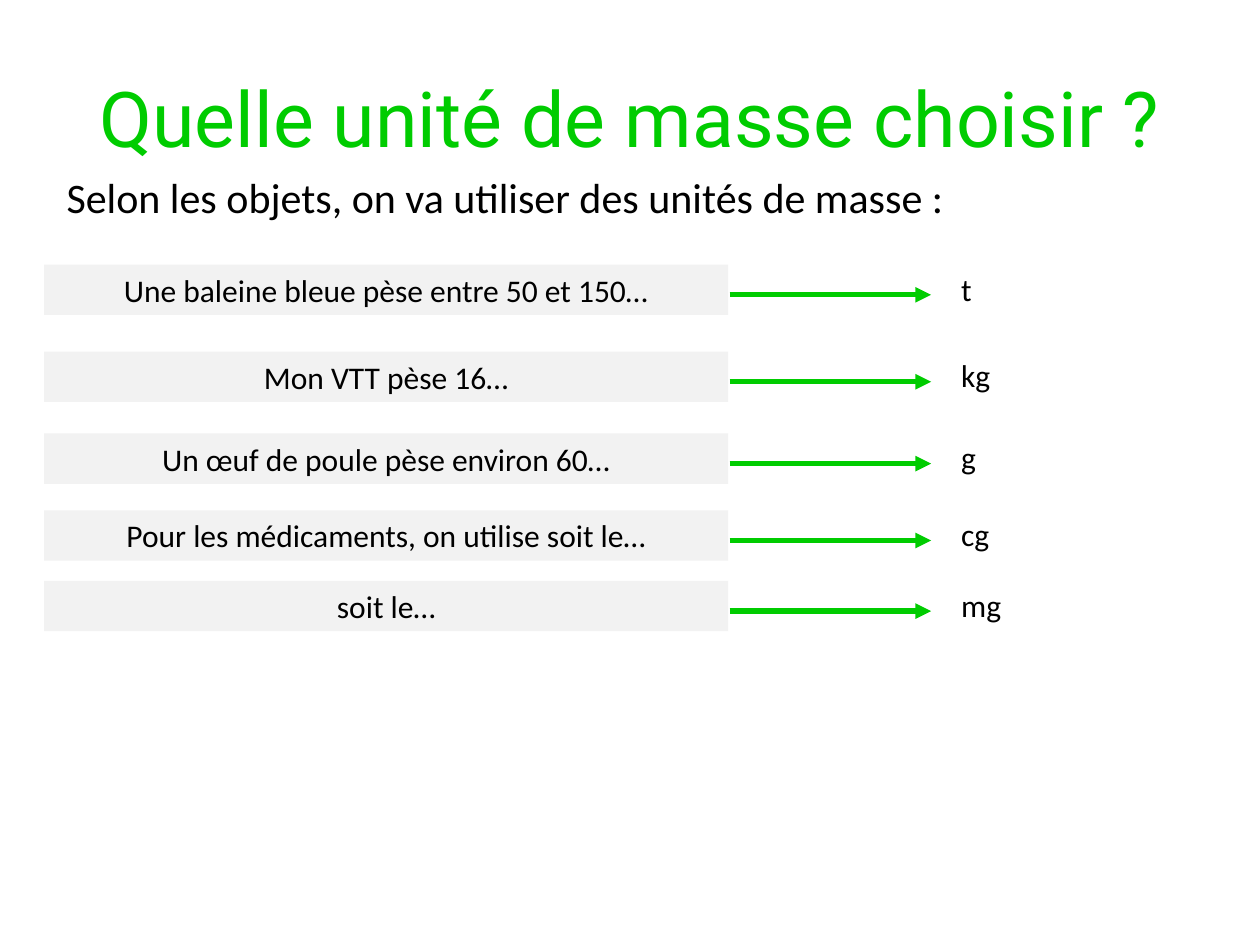
from dataclasses import dataclass

from lxml import etree
from pptx import Presentation
from pptx import util as u
from pptx.dml.color import RGBColor
from pptx.enum import shapes, text
from pptx.oxml.ns import qn
from pptx.slide import Slide
from pptx.text.text import TextFrame

WIDTH, HEIGHT = 10, 7.5


@dataclass(frozen=True)
class Theme:
    green: str = "00CC00"
    grey: str = "F2F2F2"
    black: str = "000000"
    title_font: str = "Roboto"
    body_font: str = "Calibri"
    title_size: int = 44
    intro_size: int = 24
    row_size: int = 18
    arrow_width: int = 3


@dataclass(frozen=True)
class Columns:
    """Horizontal grid of the rows, in inches."""
    label: float = 0.35
    label_width: float = 5.43
    arrow_start: float = 5.79
    arrow_end: float = 7.39
    unit: float = 7.53
    unit_width: float = 0.63


@dataclass(frozen=True)
class Row:
    label: str
    unit: str
    top: float


THEME = Theme()
COLUMNS = Columns()
ROW_HEIGHT = 0.4
ROWS = [
    Row("Une baleine bleue pèse entre 50 et 150…", "t", 2.1),
    Row("Mon VTT pèse 16…", "kg", 2.79),
    Row("Un œuf de poule pèse environ 60…", "g", 3.44),
    Row("Pour les médicaments, on utilise soit le…", "cg", 4.05),
    Row("soit le…", "mg", 4.61),
]


def inches(*lengths: float) -> list[int]:
    return [u.Inches(length) for length in lengths]


def write(frame: TextFrame, words: str, size: int, align: text.PP_ALIGN,
          font: str = THEME.body_font, color: str = THEME.black) -> None:
    frame.text = words
    frame.word_wrap = True
    para = frame.paragraphs[0]
    para.alignment = align
    span = para.runs[0]
    span.font.name = font
    span.font.size = u.Pt(size)
    span.font.color.rgb = RGBColor.from_string(color)


def add_title(slide: Slide, words: str) -> None:
    title = slide.shapes.title
    title.left, title.top, title.width, title.height = inches(
        0.05 * WIDTH, 0.04 * HEIGHT, 0.9 * WIDTH, 1.25)
    frame = title.text_frame
    write(frame, words, THEME.title_size, text.PP_ALIGN.CENTER,
          THEME.title_font, THEME.green)
    frame.vertical_anchor = text.MSO_ANCHOR.MIDDLE
    frame.auto_size = text.MSO_AUTO_SIZE.NONE


def add_text(slide: Slide, words: str, left: float, top: float, width: float,
             height: float, size: int, align: text.PP_ALIGN) -> None:
    box = slide.shapes.add_textbox(*inches(left, top, width, height))
    write(box.text_frame, words, size, align)


def add_label(slide: Slide, words: str, top: float) -> None:
    box = slide.shapes.add_shape(
        shapes.MSO_SHAPE.RECTANGLE,
        *inches(COLUMNS.label, top, COLUMNS.label_width, ROW_HEIGHT))
    box.shadow.inherit = False
    box.fill.solid()
    box.fill.fore_color.rgb = RGBColor.from_string(THEME.grey)
    box.line.fill.background()
    write(box.text_frame, words, THEME.row_size, text.PP_ALIGN.CENTER)
    box.text_frame.vertical_anchor = text.MSO_ANCHOR.TOP


def add_arrow(slide: Slide, middle: float) -> None:
    arrow = slide.shapes.add_connector(
        shapes.MSO_CONNECTOR.STRAIGHT,
        *inches(COLUMNS.arrow_start, middle, COLUMNS.arrow_end, middle))
    arrow.line.color.rgb = RGBColor.from_string(THEME.green)
    arrow.line.width = u.Pt(THEME.arrow_width)
    etree.SubElement(arrow.line._get_or_add_ln(), qn("a:tailEnd"), type="triangle")
    etree.SubElement(arrow._element.spPr, qn("a:effectLst"))


def add_row(slide: Slide, row: Row) -> None:
    add_label(slide, row.label, row.top)
    add_arrow(slide, row.top + 0.6 * ROW_HEIGHT)
    add_text(slide, row.unit, COLUMNS.unit, row.top - 0.01, COLUMNS.unit_width,
             ROW_HEIGHT, THEME.row_size, text.PP_ALIGN.LEFT)


def main() -> None:
    deck = Presentation()
    deck.slide_width, deck.slide_height = inches(WIDTH, HEIGHT)
    slide = deck.slides.add_slide(deck.slide_layouts.get_by_name("Title Only"))
    add_title(slide, "Quelle unité de masse choisir ?")
    add_text(slide, "Selon les objets, on va utiliser des unités de masse :",
             0.43, 1.31, 0.9 * WIDTH, 0.63, THEME.intro_size,
             text.PP_ALIGN.JUSTIFY)
    for row in ROWS:
        add_row(slide, row)
    deck.save("out.pptx")


if __name__ == "__main__":
    main()
